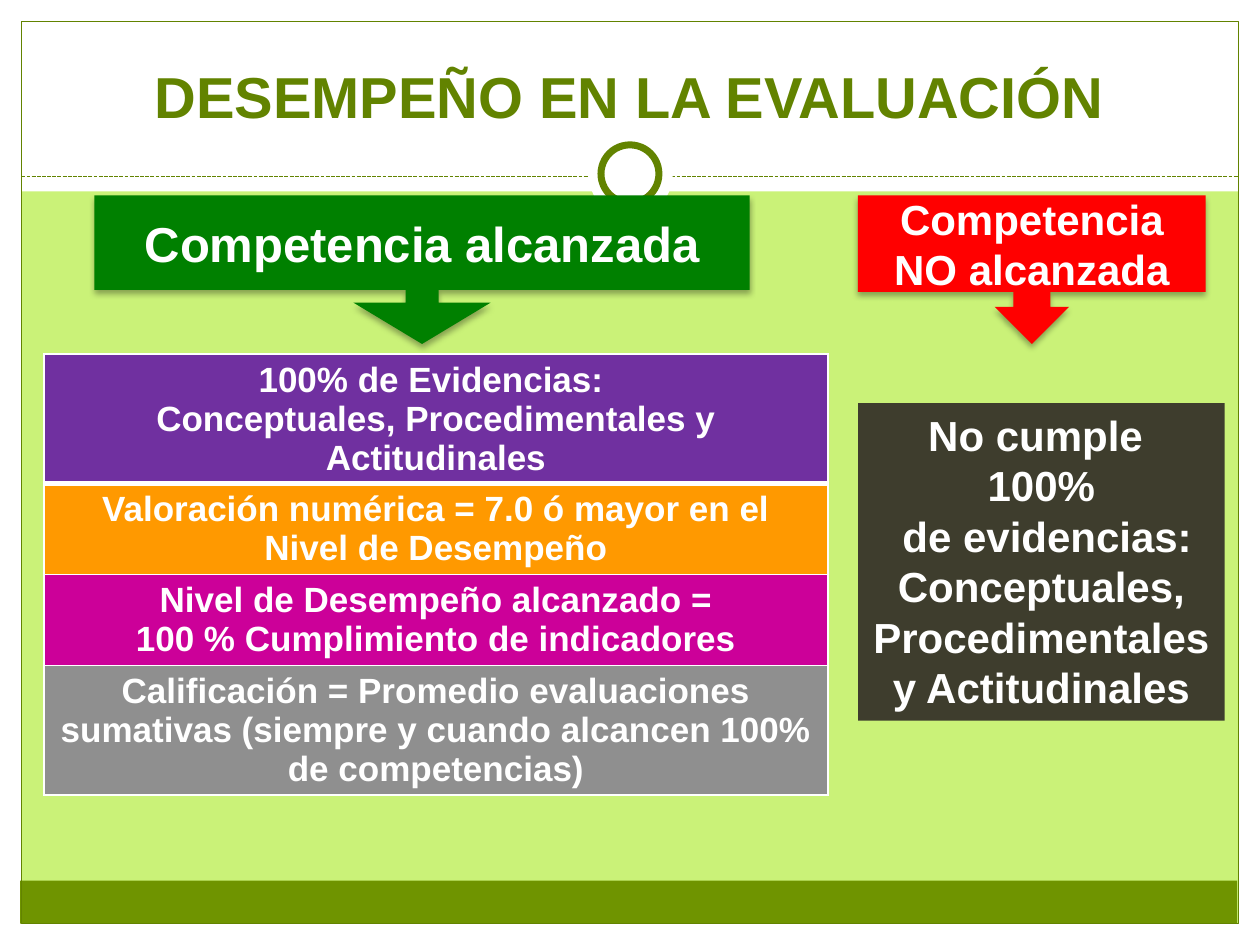
from lxml import etree
from pptx import Presentation
from pptx.dml.color import RGBColor
from pptx.enum.dml import MSO_LINE
from pptx.enum.shapes import MSO_CONNECTOR, MSO_SHAPE
from pptx.enum.text import MSO_ANCHOR, MSO_AUTO_SIZE, PP_ALIGN
from pptx.oxml import parse_xml
from pptx.oxml.ns import nsdecls, qn
from pptx.util import Inches, Pt

RECT, OVAL = MSO_SHAPE.RECTANGLE, MSO_SHAPE.OVAL
CALL = MSO_SHAPE.DOWN_ARROW_CALLOUT
MID, TOP, BASE = MSO_ANCHOR.MIDDLE, MSO_ANCHOR.TOP, MSO_ANCHOR.BOTTOM
WHITE, GREEN = "FFFFFF", "628300"


def rgb(code):
    return RGBColor.from_string(code)


def write(frame, lines, size, color=WHITE):
    frame.word_wrap = True
    look = {"name": "Arial", "size": Pt(size), "bold": True}
    for i, line in enumerate(lines):
        para = frame.paragraphs[0] if i == 0 else frame.add_paragraph()
        para.alignment = PP_ALIGN.CENTER
        run = para.add_run()
        run.text = line
        for key, value in look.items():
            setattr(run.font, key, value)
        run.font.color.rgb = rgb(color)


deck = Presentation()
deck.slide_width, deck.slide_height = Inches(10), Inches(7.5)
slide = deck.slides.add_slide(deck.slide_layouts[5])
slide.background.fill.solid()
slide.background.fill.fore_color.rgb = rgb("CAF278")
shapes = slide.shapes

rule = shapes.add_connector(
    MSO_CONNECTOR.STRAIGHT, Inches(0.17), Inches(1.4), Inches(9.83), Inches(1.4))
rule.line.color.rgb = rgb(GREEN)
rule.line.width = Pt(0.75)
rule.line.dash_style = MSO_LINE.SQUARE_DOT
etree.SubElement(rule.element.spPr, qn("a:effectLst"))

decor = [
    (RECT, (0, 7.33, 10, 0.17), WHITE, 0),
    (RECT, (0, 0, 10, 1.52), WHITE, 0),
    (RECT, (0, 0, 0.17, 7.5), WHITE, 0),
    (RECT, (9.83, 0, 0.17, 7.5), WHITE, 0),
    (RECT, (0.16, 6.99, 9.66, 0.34), "6F9400", 0),
    (RECT, (0.17, 0.17, 9.66, 7.16), None, 0.75),
    (OVAL, (4.67, 1.05, 0.67, 0.67), WHITE, 0),
    (OVAL, (4.77, 1.15, 0.46, 0.46), WHITE, 4),
]
tree = rule.element.getparent()
for kind, box, fill, width in decor:
    if kind == OVAL and width == 0:
        tree.append(rule.element)
    part = shapes.add_shape(kind, *map(Inches, box))
    part.shadow.inherit = False
    if fill:
        part.fill.solid()
        part.fill.fore_color.rgb = rgb(fill)
    else:
        part.fill.background()
    if width:
        part.line.color.rgb = rgb(GREEN)
        part.line.width = Pt(width)
    else:
        part.line.fill.background()

title = shapes.title
place = {"left": 0.33, "top": 0.25, "width": 9.33, "height": 0.83}
for key, value in place.items():
    setattr(title, key, Inches(value))
title.text_frame.auto_size = MSO_AUTO_SIZE.NONE
title.text_frame.vertical_anchor = BASE
write(title.text_frame, ["DESEMPEÑO EN LA EVALUACIÓN"], 33, GREEN)
tree.append(title.element)

rows = [
    ("7030A0", ["100% de Evidencias: ", "Conceptuales, Procedimentales y Actitudinales"]),
    ("FF9900", ["Valoración numérica = 7.0 ó mayor en el", "Nivel de Desempeño"]),
    ("CC0099", ["Nivel de Desempeño alcanzado =", "100 % Cumplimiento de indicadores"]),
    ("8F8F8F", ["Calificación = Promedio evaluaciones sumativas "
                "(siempre y cuando alcancen 100% de competencias)"]),
]
grid = shapes.add_table(
    len(rows), 1, Inches(0.35), Inches(2.81), Inches(6.22), Inches(3.73))
for i, (fill, lines) in enumerate(rows):
    grid.table.rows[i].height = Inches(0.41)
    cell = grid.table.cell(i, 0)
    write(cell.text_frame, lines, 20)
    props = cell._tc.get_or_add_tcPr()
    for side in "LRTB":
        thick = 3 if (i, side) in [(0, "B"), (1, "T")] else 1
        props.append(parse_xml(
            f'<a:ln{side} {nsdecls("a")} w="{Pt(thick)}"><a:solidFill>'
            f'<a:srgbClr val="{WHITE}"/></a:solidFill></a:ln{side}>'))
    cell.fill.solid()
    cell.fill.fore_color.rgb = rgb(fill)
grid.height = Inches(3.73)

cards = [
    (CALL, (0.75, 1.55, 5.2, 1.18), "008000", 28, MID,
     ["Competencia alcanzada"], (0.222, 0.462, 0.278, 0.636)),
    (CALL, (6.81, 1.55, 2.76, 1.18), "FF0000", 24, MID,
     ["Competencia NO alcanzada"], ()),
    (RECT, (6.81, 3.2, 2.91, 2.52), "3E3D2D", 24, TOP,
     ["No cumple ", "100%", " de evidencias:",
      "Conceptuales, Procedimentales y Actitudinales"], ()),
]
for kind, box, fill, size, anchor, lines, bends in cards:
    card = shapes.add_shape(kind, *map(Inches, box))
    card.fill.solid()
    card.fill.fore_color.rgb = rgb(fill)
    card.line.fill.background()
    card.shadow.inherit = False
    for i, bend in enumerate(bends):
        card.adjustments[i] = bend
    card.text_frame.vertical_anchor = anchor
    write(card.text_frame, lines, size)
    if kind == CALL:
        card.element.spPr.find(qn("a:effectLst")).append(parse_xml(
            f'<a:outerShdw {nsdecls("a")} blurRad="{Pt(3.5)}" dist="{Pt(2.2)}" '
            'dir="5400000" rotWithShape="0"><a:srgbClr val="000000">'
            '<a:alpha val="32000"/></a:srgbClr></a:outerShdw>'))
    else:
        card.text_frame.auto_size = MSO_AUTO_SIZE.SHAPE_TO_FIT_TEXT

deck.save("out.pptx")
